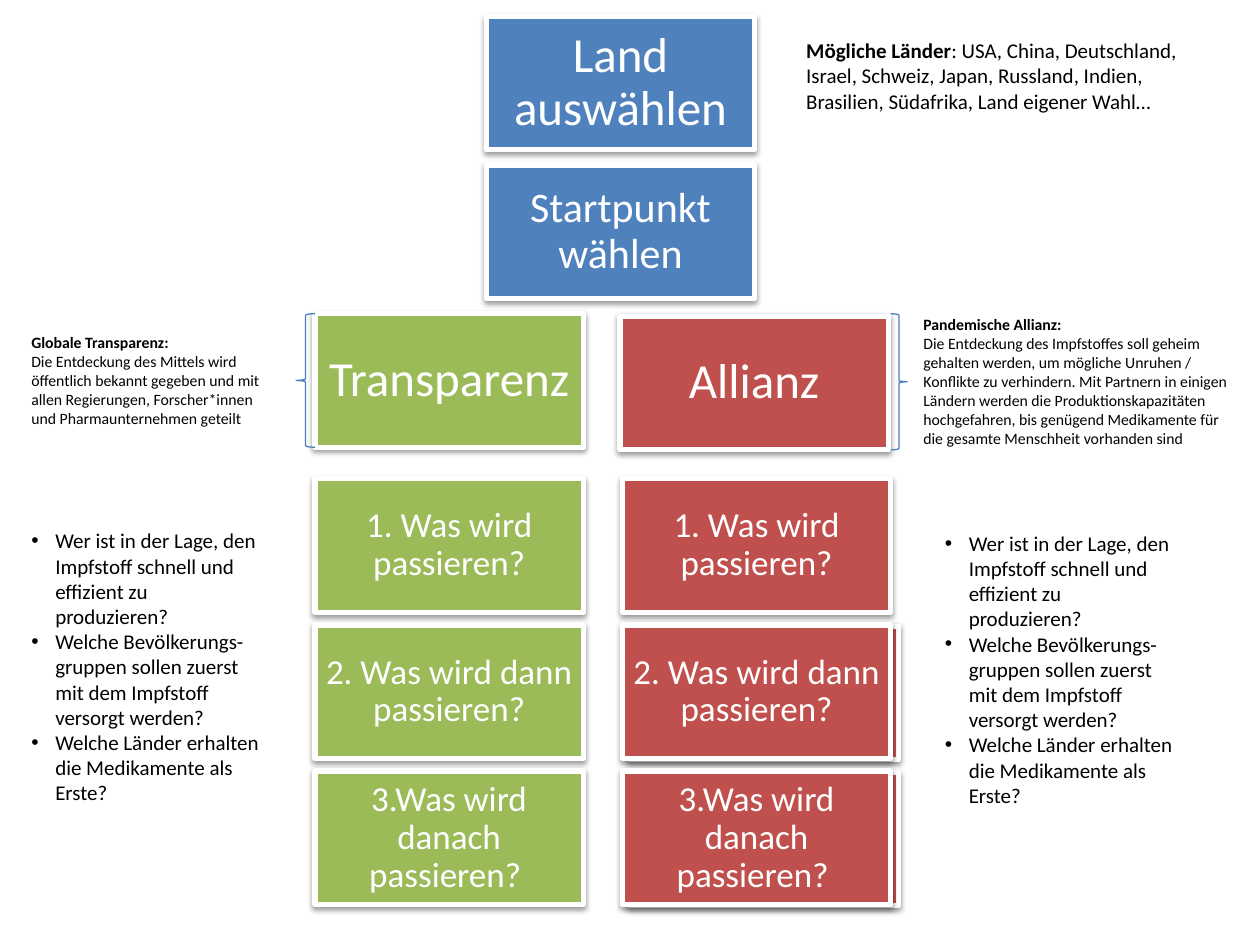
from lxml import etree
from pptx import Presentation
from pptx.dml.color import RGBColor
from pptx.enum import shapes, text
from pptx.oxml import ns
from pptx.util import Inches, Pt

THEME = {
    "font": "Calibri",
    "blue": "4F81BD", "green": "9BBB59", "red": "C0504D",
    "brace": "4B7EBC", "white": "FFFFFF", "black": "000000",
    "headline": 28, "subhead": 24, "step": 20, "body": 12, "note": 9,
}
CARD_WIDTH, CARD_HEIGHT = 2.13, 1.06
CENTER, GREEN_LEFT, RED_LEFT, BACK_LEFT = 3.86, 2.5, 4.94, 5
STEP_TOP, STEP_PITCH = 3.8, 1.16

HEADS = [
    ("Land auswählen", "blue", "headline", CENTER, 0.13),
    ("Startpunkt wählen", "blue", "subhead", CENTER, 1.31),
    ("Transparenz", "green", "headline", GREEN_LEFT, 2.49),
    ("Allianz", "red", "headline", 4.92, 2.51),
]
STEPS = ["1. Was wird passieren?", "2. Was wird dann passieren?", "3.Was wird danach passieren? "]
COUNTRIES = [
    [("Mögliche Länder", True), (": USA, China, Deutschland,", False)],
    [("Israel, Schweiz, Japan, Russland, Indien,", False)],
    [("Brasilien, Südafrika, Land eigener Wahl…", False)],
]
NOTES = [
    ((0.15, 2.59, 2.16, 0.86), "Globale Transparenz: ",
     "Die Entdeckung des Mittels wird öffentlich bekannt gegeben und mit allen "
     "Regierungen, Forscher*innen und Pharmaunternehmen geteilt"),
    ((7.23, 2.45, 2.72, 1.16), "Pandemische Allianz: ",
     "Die Entdeckung des Impfstoffes soll geheim gehalten werden, um mögliche Unruhen / "
     "Konflikte zu verhindern. Mit Partnern in einigen Ländern werden die "
     "Produktionskapazitäten hochgefahren, bis genügend Medikamente für die gesamte "
     "Menschheit vorhanden sind"),
]
QUESTIONS = [
    "Wer ist in der Lage, den Impfstoff schnell und effizient zu produzieren?",
    "Welche Bevölkerungs-gruppen sollen zuerst mit dem Impfstoff versorgt werden?",
    "Welche Länder erhalten die Medikamente als Erste?",
]
QUESTION_PLACES = [(0.15, 4.14, 2.01, 2.32), (7.4, 4.16, 2.01, 2.32)]
BRACES = [
    (shapes.MSO_SHAPE.RIGHT_BRACE, (7.07, 2.49, 0.13, 1.08)),
    (shapes.MSO_SHAPE.LEFT_BRACE, (2.35, 2.49, 0.15, 1.06)),
]


def color(name):
    return RGBColor.from_string(THEME[name])


def add_span(para, words, size, ink="black", bold=False):
    span = para.add_run()
    span.text = words
    span.font.name = THEME["font"]
    span.font.size = Pt(THEME[size])
    span.font.bold = bold
    span.font.color.rgb = color(ink)


def add_shadow(box):
    effects = box._element.spPr.find(ns.qn("a:effectLst"))
    shadow = etree.SubElement(effects, ns.qn("a:outerShdw"), blurRad=str(Pt(3.1)),
                              dist=str(Pt(1.6)), dir="5400000", rotWithShape="0")
    shade = etree.SubElement(shadow, ns.qn("a:srgbClr"), val=THEME["black"])
    etree.SubElement(shade, ns.qn("a:alpha"), val="38000")


def add_card(page, words, fill, size, left, top):
    place = map(Inches, (left, top, CARD_WIDTH, CARD_HEIGHT))
    box = page.shapes.add_shape(shapes.MSO_SHAPE.RECTANGLE, *place)
    box.shadow.inherit = False
    add_shadow(box)
    box.fill.solid()
    box.fill.fore_color.rgb = color(fill)
    box.line.color.rgb = color("white")
    box.line.width = Pt(3)
    if not words:
        return
    frame = box.text_frame
    frame.word_wrap = True
    frame.vertical_anchor = text.MSO_ANCHOR.MIDDLE
    frame.margin_left = frame.margin_right = Inches(0.05)
    frame.margin_top = frame.margin_bottom = Inches(0.05)
    para = frame.paragraphs[0]
    para.alignment = text.PP_ALIGN.CENTER
    para.line_spacing = 0.9
    add_span(para, words, size, "white")


def add_paras(page, place, count):
    frame = page.shapes.add_textbox(*map(Inches, place)).text_frame
    frame.word_wrap = True
    return [frame.paragraphs[0]] + [frame.add_paragraph() for _ in range(count - 1)]


def add_bullet(para):
    props = para._p.get_or_add_pPr()
    props.set("marL", str(Inches(0.19)))
    props.set("indent", str(Inches(-0.19)))
    etree.SubElement(props, ns.qn("a:buFont"), typeface="Arial")
    etree.SubElement(props, ns.qn("a:buChar"), char="•")


def main():
    deck = Presentation()
    deck.slide_width, deck.slide_height = Inches(10), Inches(7.5)
    page = deck.slides.add_slide(deck.slide_layouts[6])

    for head in HEADS:
        add_card(page, *head)
    for index, words in enumerate(STEPS):
        top = STEP_TOP + index * STEP_PITCH
        add_card(page, words, "green", "step", GREEN_LEFT, top)
        if index:
            add_card(page, "", "red", "step", BACK_LEFT, top + 0.01)
        add_card(page, words, "red", "step", RED_LEFT, top)

    paras = add_paras(page, (6.3, 0.25, 3.19, 0.71), len(COUNTRIES))
    for para, spans in zip(paras, COUNTRIES):
        for words, bold in spans:
            add_span(para, words, "body", bold=bold)

    for place, title, words in NOTES:
        para = add_paras(page, place, 1)[0]
        add_span(para, title, "note", bold=True)
        para.add_line_break()
        add_span(para, words, "note")

    for place in QUESTION_PLACES:
        for para, words in zip(add_paras(page, place, len(QUESTIONS)), QUESTIONS):
            add_bullet(para)
            add_span(para, words, "body")

    for kind, place in BRACES:
        brace = page.shapes.add_shape(kind, *map(Inches, place))
        brace.shadow.inherit = False
        brace.fill.background()
        brace.line.color.rgb = color("brace")
        brace.line.width = Pt(0.75)

    deck.save("out.pptx")


if __name__ == "__main__":
    main()
